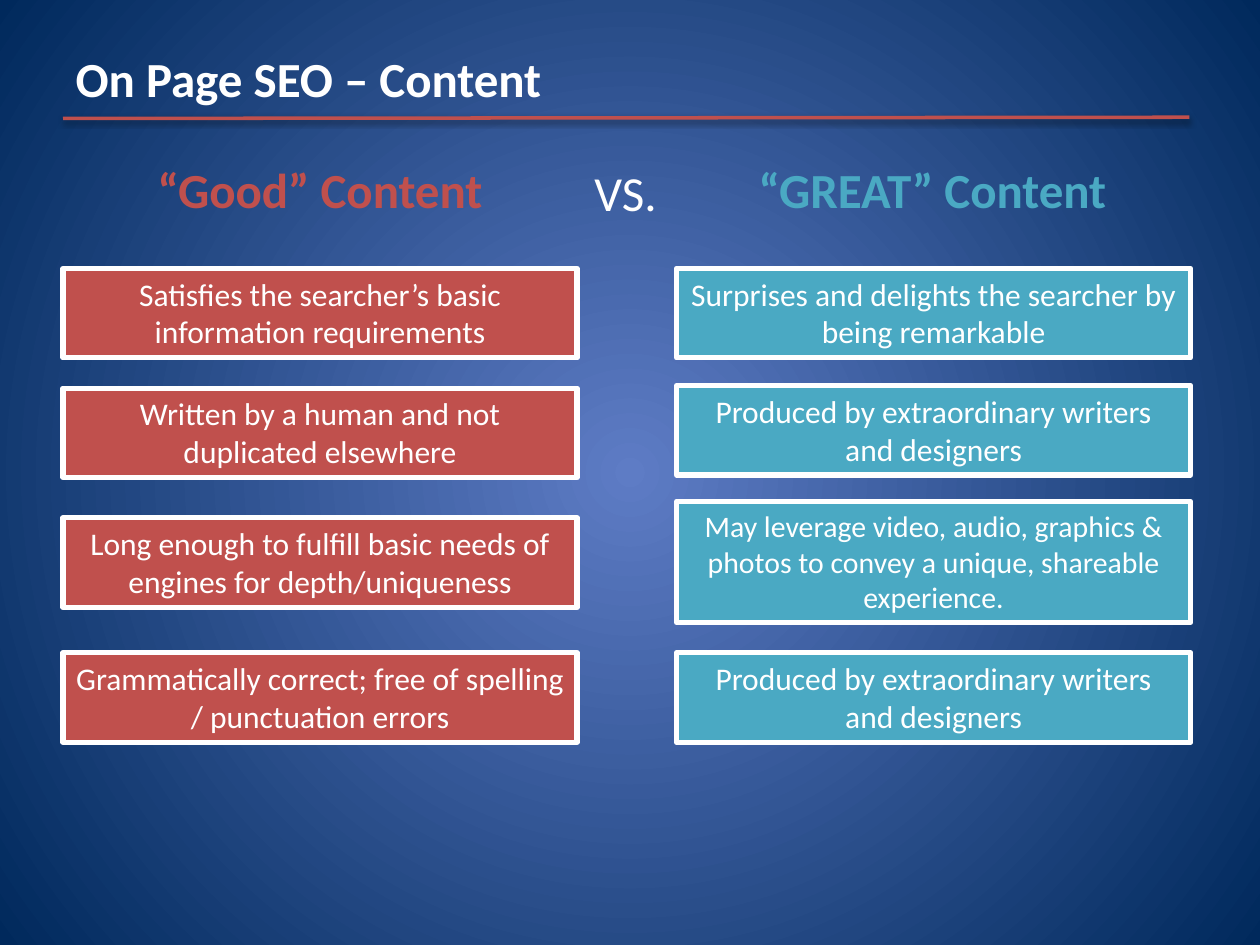
from lxml.etree import SubElement as Sub
from pptx import Presentation
from pptx.dml.color import RGBColor
from pptx.enum.shapes import MSO_CONNECTOR as Conn, MSO_SHAPE as Shape
from pptx.enum.text import MSO_ANCHOR as Anchor, MSO_AUTO_SIZE as Auto, PP_ALIGN as Align
from pptx.oxml.ns import qn
from pptx.util import Pt

WHITE, RED, TEAL = "FFFFFF", "C0504D", "4AA9C3"
TITLE = "On Page SEO – Content"
HEADS = [
    ("“GREAT” Content", TEAL, True, (400.3, 87.8, 265, 41)),
    ("“Good” Content", RED, True, (55.4, 87.8, 254.9, 41)),
    ("VS.", WHITE, False, (332.6, 89.3, 51.1, 41)),
]
COLUMNS = [
    (36, RED, [
        ("Satisfies the searcher’s basic information requirements", 153.4, 18),
        ("Written by a human and not duplicated elsewhere", 221.8, 18),
        ("Long enough to fulfill basic needs of engines for depth/uniqueness", 295.9, 18),
        ("Grammatically correct; free of spelling / punctuation errors", 373, 18),
    ]),
    (386.6, TEAL, [
        ("Surprises and delights the searcher by being remarkable", 153.4, 18),
        ("Produced by extraordinary writers and designers", 220.3, 18),
        ("May leverage video, audio, graphics & photos to convey a unique, "
         "shareable experience.", 286.6, 17),
        ("Produced by extraordinary writers and designers", 373, 18),
    ]),
]
CARD_W, CARD_H, TALL_H = 293.8, 51.1, 69.1


def rgb(code):
    return RGBColor.from_string(code)


def write(shape, text, size, color, bold=False, align=Align.CENTER):
    frame = shape.text_frame
    frame.text = text
    para = frame.paragraphs[0]
    para.alignment = align
    font = para.runs[0].font
    font.name, font.size, font.bold = "Calibri", Pt(size), bold
    font.color.rgb = rgb(color)
    return frame


def paint(slide):
    fill = slide.background.fill
    fill.gradient()
    for stop, code in zip(fill.gradient_stops, ("5E7CC5", "00295C")):
        stop.color.rgb = rgb(code)
    grad = slide.element.find(".//" + qn("a:gradFill"))
    grad.remove(grad.find(qn("a:lin")))
    path = Sub(grad, qn("a:path"), path="circle")
    Sub(path, qn("a:fillToRect"), l="50000", t="50000", r="50000", b="50000")


def add_title(slide):
    title = slide.shapes.title
    title.left, title.top, title.width, title.height = map(Pt, (36, 21.6, 648, 45.4))
    frame = write(title, TITLE, 28, WHITE, True, Align.LEFT)
    frame.vertical_anchor = Anchor.MIDDLE


def add_rule(slide):
    rule = slide.shapes.add_connector(Conn.STRAIGHT, *map(Pt, (36, 67.7, 679.7, 67)))
    rule.line.color.rgb = rgb(RED)
    rule.line.width = Pt(2)
    effect = Sub(rule.element.spPr, qn("a:effectLst"))
    shade = Sub(effect, qn("a:outerShdw"), blurRad=str(Pt(3.1)), dist=str(Pt(1.6)),
                dir="5400000", rotWithShape="0")
    black = Sub(shade, qn("a:srgbClr"), val="000000")
    Sub(black, qn("a:alpha"), val="38000")


def add_head(slide, text, color, bold, place):
    box = slide.shapes.add_textbox(*map(Pt, place))
    align = Align.CENTER if bold else Align.LEFT
    frame = write(box, text, 28, color, bold, align)
    frame.word_wrap = bold
    frame.auto_size = Auto.SHAPE_TO_FIT_TEXT


def add_card(slide, left, color, text, top, size):
    high = CARD_H if size == 18 else TALL_H
    card = slide.shapes.add_shape(Shape.RECTANGLE, *map(Pt, (left, top, CARD_W, high)))
    card.shadow.inherit = False
    card.fill.solid()
    card.fill.fore_color.rgb = rgb(color)
    card.line.color.rgb = rgb(WHITE)
    card.line.width = Pt(3)
    frame = write(card, text, size, WHITE)
    frame.word_wrap = True
    frame.vertical_anchor = Anchor.TOP
    frame.auto_size = Auto.SHAPE_TO_FIT_TEXT


def main():
    deck = Presentation()
    deck.slide_width, deck.slide_height = Pt(720), Pt(540)
    slide = deck.slides.add_slide(deck.slide_layouts[5])
    paint(slide)
    add_title(slide)
    add_rule(slide)
    for head in HEADS:
        add_head(slide, *head)
    for left, color, cards in COLUMNS:
        for card in cards:
            add_card(slide, left, color, *card)
    deck.save("out.pptx")


if __name__ == "__main__":
    main()
